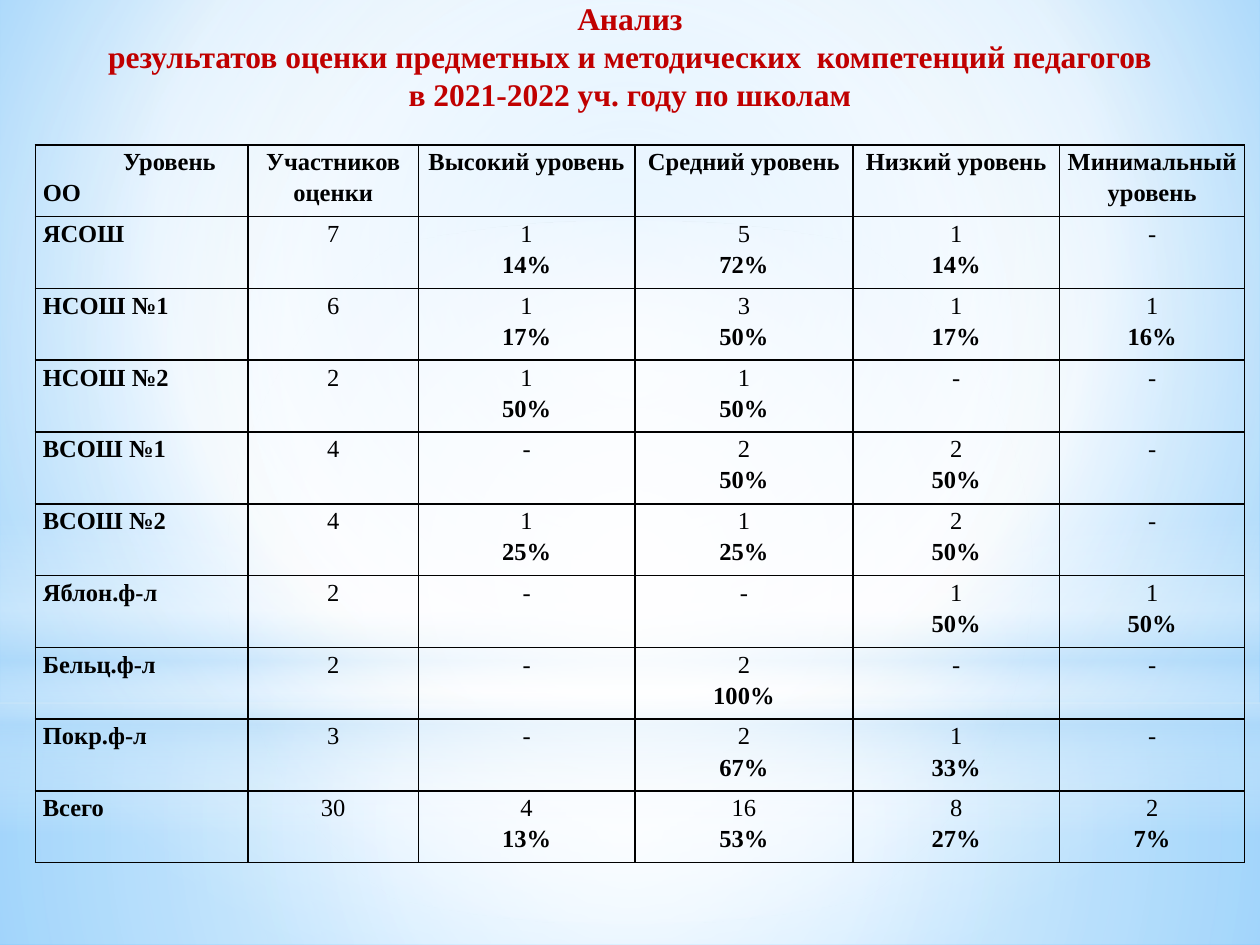
"""Build the slide with school-by-school results of the teacher competence assessment."""
from dataclasses import dataclass
from typing import NamedTuple

from lxml import etree
from pptx import Presentation
from pptx.dml.color import RGBColor
from pptx.enum.shapes import MSO_SHAPE
from pptx.enum.text import MSO_ANCHOR, PP_ALIGN
from pptx.oxml.ns import qn
from pptx.util import Inches, Pt

CENTER, LEFT = PP_ALIGN.CENTER, PP_ALIGN.LEFT
MIDDLE = MSO_ANCHOR.MIDDLE
RECTANGLE, OVAL = MSO_SHAPE.RECTANGLE, MSO_SHAPE.OVAL


@dataclass(frozen=True)
class Theme:
    font: str = "Times New Roman"
    title_size: int = 18
    table_size: int = 14
    title_color: str = "C00000"
    text_color: str = "000000"
    white: str = "FFFFFF"
    haze: str = "B4DCFA"
    sky: str = "9ED5FF"
    deep_sky: str = "5BB9FF"
    line_spacing: float = 1.15
    border_width: int = 1


class Stop(NamedTuple):
    position: int
    color: str
    opacity: int = 100


class Gradient(NamedTuple):
    stops: list[Stop]
    focus: tuple[int, int, int, int] | None = (50, 50, 50, 50)


class Glow(NamedTuple):
    kind: MSO_SHAPE
    top: float
    height: float
    gradient: Gradient


class School(NamedTuple):
    name: str
    participants: str
    levels: tuple[str, str, str, str]


THEME = Theme()
BACKGROUND = Gradient(
    [Stop(0, THEME.sky), Stop(60, THEME.white), Stop(100, THEME.deep_sky)],
    (20, 10, 20, 60),
)
GLOWS = [
    Glow(RECTANGLE, 5.58, 1.92, Gradient(
        [Stop(0, THEME.white, 91), Stop(37, THEME.white, 76), Stop(100, THEME.haze, 79)])),
    Glow(RECTANGLE, 0, 5.58, Gradient(
        [Stop(0, THEME.white, 89), Stop(48, THEME.white, 62), Stop(100, THEME.haze, 79)])),
    Glow(RECTANGLE, 4.12, 2.5, Gradient(
        [Stop(0, THEME.white, 0), Stop(29, THEME.white, 30), Stop(45, THEME.haze, 40),
         Stop(55, THEME.white, 26), Stop(65, THEME.haze, 60), Stop(100, THEME.white, 0)], None)),
    Glow(OVAL, 1.75, 5.58, Gradient([Stop(0, THEME.white), Stop(56, THEME.white, 0)])),
]
TITLE = (
    "Анализ\n"
    "результатов оценки предметных и методических  компетенций педагогов\n"
    "в 2021-2022 уч. году по школам"
)
HEADERS = ["Уровень\nОО", "Участников оценки", "Высокий уровень",
           "Средний уровень", "Низкий уровень", "Минимальный уровень"]
SCHOOLS = [
    School("ЯСОШ", "7", ("1\n14%", "5\n72%", "1\n14%", "-")),
    School("НСОШ №1", "6", ("1\n17%", "3\n50%", "1\n17%", "1\n16%")),
    School("НСОШ №2", "2", ("1\n50%", "1\n50%", "-", "-")),
    School("ВСОШ №1", "4", ("-", "2\n50%", "2\n50%", "-")),
    School("ВСОШ №2", "4", ("1\n25%", "1\n25%", "2\n50%", "-")),
    School("Яблон.ф-л", "2", ("-", "-", "1\n50%", "1\n50%")),
    School("Бельц.ф-л", "2", ("-", "2\n100%", "-", "-")),
    School("Покр.ф-л", "3", ("-", "2\n67%", "1\n33%", "-")),
    School("Всего", "30", ("4\n13%", "16\n53%", "8\n27%", "2\n7%")),
]
COLUMN_WIDTHS = [1.69, 1.35, 1.72, 1.73, 1.64, 1.47]
ROW_HEIGHT = 0.57
HEADER_INDENT = 0.44


def apply_gradient(fill, element, gradient: Gradient) -> None:
    """Swap the solid fill held in an element for a gradient."""
    fill.solid()
    solid = element.xpath(".//a:solidFill")[0]
    gradient_fill = etree.Element(qn("a:gradFill"), rotWithShape="1")
    stop_list = etree.SubElement(gradient_fill, qn("a:gsLst"))
    for stop in gradient.stops:
        node = etree.SubElement(stop_list, qn("a:gs"), pos=str(stop.position * 1000))
        color = etree.SubElement(node, qn("a:srgbClr"), val=stop.color)
        if stop.opacity < 100:
            etree.SubElement(color, qn("a:alpha"), val=str(stop.opacity * 1000))
    if gradient.focus:
        circle = etree.SubElement(gradient_fill, qn("a:path"), {"path": "circle"})
        edges = {edge: str(value * 1000) for edge, value in zip("ltrb", gradient.focus)}
        etree.SubElement(circle, qn("a:fillToRect"), edges)
    else:
        etree.SubElement(gradient_fill, qn("a:lin"), ang="5400000", scaled="0")
    solid.getparent().replace(solid, gradient_fill)


def add_glow(slide, glow: Glow) -> None:
    """Draw one full-width translucent layer of the backdrop."""
    shape = slide.shapes.add_shape(
        glow.kind, 0, Inches(glow.top), Inches(10), Inches(glow.height))
    shape.shadow.inherit = False
    shape.line.fill.background()
    apply_gradient(shape.fill, shape.element, glow.gradient)


def style_paragraph(paragraph, size: int, color: str, bold: bool, alignment: PP_ALIGN) -> None:
    """Set the font and alignment of one paragraph."""
    paragraph.alignment = alignment
    paragraph.font.name = THEME.font
    paragraph.font.size = Pt(size)
    paragraph.font.bold = bold
    paragraph.font.color.rgb = RGBColor.from_string(color)


def add_title(slide) -> None:
    """Add the centred three-line title."""
    box = slide.shapes.add_textbox(0, Inches(-0.06), Inches(10), Inches(1.01))
    frame = box.text_frame
    frame.word_wrap = True
    frame.vertical_anchor = MIDDLE
    frame.text = TITLE
    for paragraph in frame.paragraphs:
        style_paragraph(paragraph, THEME.title_size, THEME.title_color, True, CENTER)


def add_borders(cell) -> None:
    """Outline a table cell on all four sides."""
    properties = cell._tc.get_or_add_tcPr()
    for side in ("a:lnL", "a:lnR", "a:lnT", "a:lnB"):
        line = etree.SubElement(properties, qn(side), w=str(Pt(THEME.border_width)))
        fill = etree.SubElement(line, qn("a:solidFill"))
        etree.SubElement(fill, qn("a:srgbClr"), val=THEME.text_color)


def fill_cell(cell, text: str, is_header: bool, is_name: bool) -> None:
    """Write a cell: headers, names and percentages are bold."""
    add_borders(cell)
    cell.fill.background()
    cell.margin_left = cell.margin_right = Inches(0.06)
    cell.margin_top = cell.margin_bottom = 0
    cell.text_frame.text = text
    for index, paragraph in enumerate(cell.text_frame.paragraphs):
        is_indented = is_header and is_name and index == 0
        if is_indented:
            paragraph._p.get_or_add_pPr().set("marL", str(Inches(HEADER_INDENT)))
        alignment = LEFT if is_name and not is_indented else CENTER
        bold = is_header or is_name or index > 0
        paragraph.line_spacing = THEME.line_spacing
        style_paragraph(paragraph, THEME.table_size, THEME.text_color, bold, alignment)


def add_results_table(slide) -> None:
    """Add the table of levels by school."""
    rows = [HEADERS] + [[school.name, school.participants, *school.levels] for school in SCHOOLS]
    table = slide.shapes.add_table(
        len(rows), len(HEADERS), Inches(0.28), Inches(1.15),
        Inches(sum(COLUMN_WIDTHS)), Inches(ROW_HEIGHT * len(rows))).table
    table.first_row = table.horz_banding = False
    for column, width in zip(table.columns, COLUMN_WIDTHS):
        column.width = Inches(width)
    for row_index, row in enumerate(rows):
        table.rows[row_index].height = Inches(ROW_HEIGHT)
        for column_index, text in enumerate(row):
            fill_cell(table.cell(row_index, column_index), text, row_index == 0, column_index == 0)


def main() -> None:
    """Assemble and save the presentation."""
    presentation = Presentation()
    presentation.slide_width, presentation.slide_height = Inches(10), Inches(7.5)
    slide = presentation.slides.add_slide(presentation.slide_layouts[6])
    apply_gradient(slide.background.fill, slide.element, BACKGROUND)
    for glow in GLOWS:
        add_glow(slide, glow)
    add_title(slide)
    add_results_table(slide)
    presentation.save("out.pptx")


if __name__ == "__main__":
    main()
